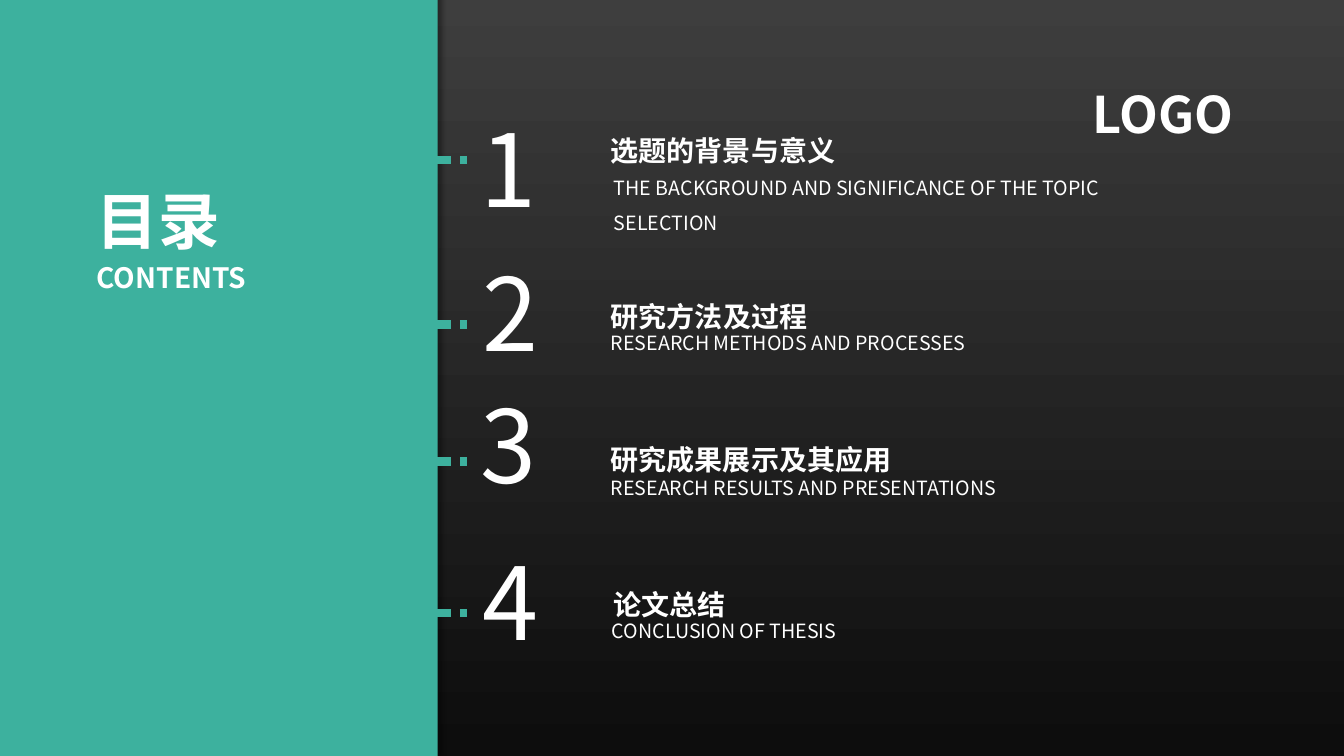
import pptx
import pptx.dml.color
import pptx.enum.dml
import pptx.enum.shapes
import pptx.enum.text
import pptx.oxml
import pptx.oxml.ns
import pptx.util
from pptx.util import Inches

RGBColor = pptx.dml.color.RGBColor
PP_ALIGN = pptx.enum.text.PP_ALIGN

FONT = "Noto Sans CJK SC"
WHITE = RGBColor(0xFF, 0xFF, 0xFF)
SILVER = RGBColor(0xDC, 0xDC, 0xDC)
TEAL = RGBColor(0x3D, 0xB1, 0x9E)
CHARCOAL = RGBColor(0x3E, 0x3E, 0x3E)
BLACK = RGBColor(0x0D, 0x0D, 0x0D)
NS = pptx.oxml.ns.nsdecls("a")

SECTIONS = [
    ("1", (4.67, 1.01), "选题的背景与意义", (5.96, 1.11, 2.67),
     "THE BACKGROUND AND SIGNIFICANCE OF THE TOPIC SELECTION", (5.99, 1.58, 5.85), 1.59),
    ("2", (4.69, 2.44), "研究方法及过程", (5.96, 2.76, 2.45),
     "RESEARCH METHODS AND PROCESSES", (5.96, 3.12, 5.35), 3.22),
    ("3", (4.67, 3.75), "研究成果展示及其应用", (5.96, 4.17, 3.14),
     "RESEARCH RESULTS AND PRESENTATIONS", (5.96, 4.56, 6.27), 4.58),
    ("4", (4.69, 5.3), "论文总结", (5.99, 5.61, 1.36),
     "CONCLUSION OF THESIS", (5.97, 5.97, 4.69), 6.08),
]


def set_gradient(fill, top, bottom):
    fill.gradient()
    fill.gradient_angle = 270
    for stop, color in zip(fill.gradient_stops, (top, bottom)):
        stop.color.rgb = color


def add_panel(s, width):
    sp = s.shapes.add_shape(pptx.enum.shapes.MSO_SHAPE.RECTANGLE,
                            Inches(-0.01), Inches(-0.06), Inches(width), Inches(7.56))
    sp.shadow.inherit = False
    sp.line.fill.background()
    return sp


def add_panel_shadow(sp):
    effects = sp.element.spPr.find(pptx.oxml.ns.qn("a:effectLst"))
    effects.append(pptx.oxml.parse_xml(
        f'<a:outerShdw {NS} blurRad="50800" dist="38100" dir="0" algn="l" rotWithShape="0">'
        '<a:srgbClr val="000000"><a:alpha val="40000"/></a:srgbClr></a:outerShdw>'))


def write(sp, text, size, bold=False, align=PP_ALIGN.LEFT, spacing=1.5):
    tf = sp.text_frame
    tf.text = text
    tf.word_wrap = True
    tf.auto_size = pptx.enum.text.MSO_AUTO_SIZE.SHAPE_TO_FIT_TEXT
    tf.vertical_anchor = pptx.enum.text.MSO_ANCHOR.TOP
    p = tf.paragraphs[0]
    p.alignment = align
    p.line_spacing = spacing
    r = p.runs[0]
    r.font.name = FONT
    r.font.size = pptx.util.Pt(size)
    r.font.bold = bold
    r.font.color.rgb = WHITE
    latin = r.font._element.find(pptx.oxml.ns.qn("a:latin"))
    latin.addnext(pptx.oxml.parse_xml(f'<a:ea {NS} typeface="{FONT}"/>'))


def add_text(s, box, text, size, **style):
    sp = s.shapes.add_textbox(*map(Inches, box))
    write(sp, text, size, **style)


def place_title(s, box, text):
    sp = s.shapes.title
    sp.left, sp.top, sp.width, sp.height = map(Inches, box)
    write(sp, text, 44, bold=True, align=PP_ALIGN.JUSTIFY)
    sp.element.getparent().append(sp.element)


def add_dash(s, y):
    line = s.shapes.add_connector(pptx.enum.shapes.MSO_CONNECTOR.STRAIGHT,
                                  Inches(3.56), Inches(y), Inches(4.63), Inches(y))
    line.line.color.rgb = TEAL
    line.line.width = pptx.util.Pt(6)
    line.line.dash_style = pptx.enum.dml.MSO_LINE.SQUARE_DOT
    line.element.spPr.append(pptx.oxml.parse_xml(f"<a:effectLst {NS}/>"))


def add_section(s, number, number_at, heading, heading_at, caption, caption_at, dash_y):
    add_dash(s, dash_y)
    add_text(s, (*heading_at, 0.56), heading, 20, bold=True)
    add_text(s, (*caption_at, 0.42), caption, 14)
    add_text(s, (*number_at, 0.67, 1.31), number, 72, spacing=1.0)


def main():
    prs = pptx.Presentation()
    prs.slide_width, prs.slide_height = Inches(13.33), Inches(7.5)
    s = prs.slides.add_slide(prs.slide_layouts.get_by_name("Title Only"))
    set_gradient(s.background.fill, WHITE, SILVER)

    backdrop = add_panel(s, 13.34)
    set_gradient(backdrop.fill, CHARCOAL, BLACK)
    sidebar = add_panel(s, 4.35)
    sidebar.fill.solid()
    sidebar.fill.fore_color.rgb = TEAL
    add_panel_shadow(sidebar)

    add_text(s, (10.74, 0.48, 1.7, 0.93), "LOGO", 36, bold=True)
    place_title(s, (0.86, 1.4, 1.9, 1.11), "目录")
    add_text(s, (0.86, 2.37, 2.62, 0.56), "CONTENTS", 20, bold=True, align=PP_ALIGN.JUSTIFY)
    for section in SECTIONS:
        add_section(s, *section)
    prs.save("out.pptx")


if __name__ == "__main__":
    main()
